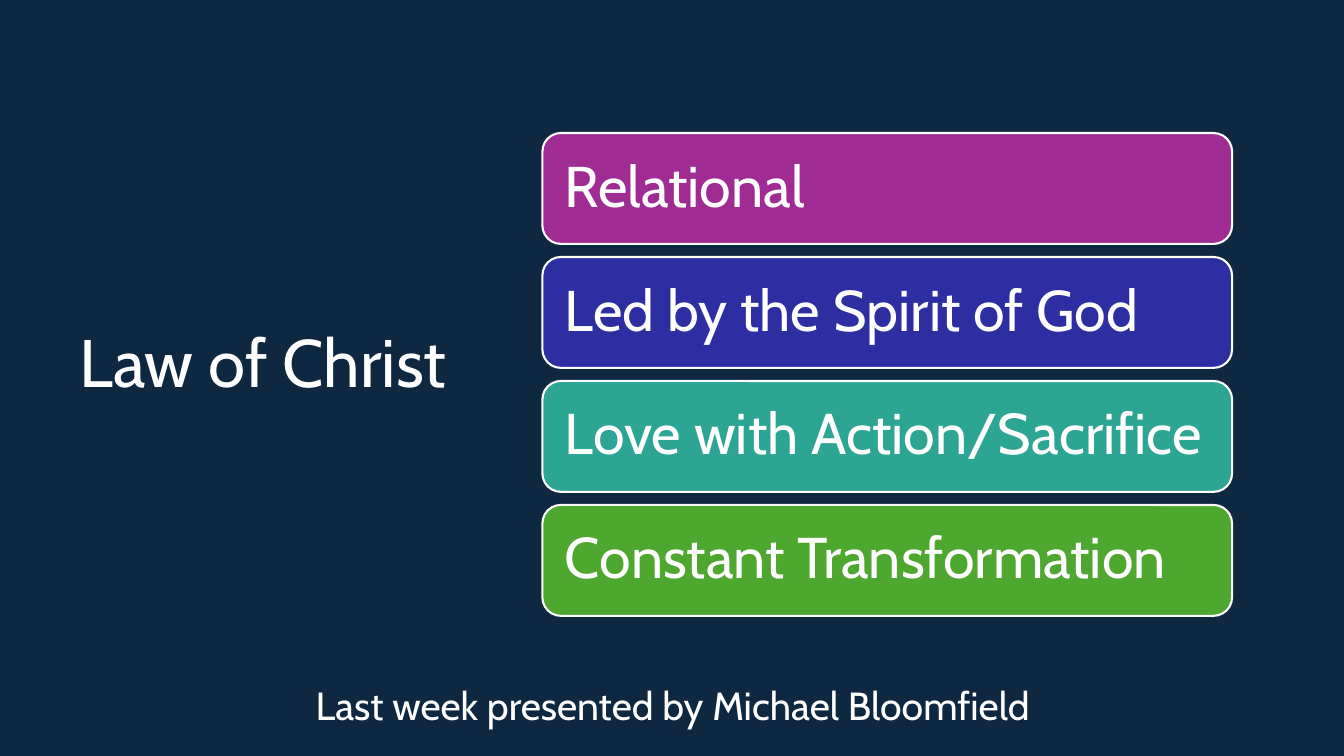
from dataclasses import dataclass

from pptx import Presentation
from pptx import util as u
from pptx.dml.color import RGBColor
from pptx.enum import shapes, text


@dataclass(frozen=True)
class Theme:
    font: str = "Cabin"
    background: str = "0E2841"
    light: str = "FFFFFF"
    cards: tuple = ("A02B93", "2C2EA2", "2DA594", "4EA72E")
    title_size: int = 48
    card_size: int = 41
    caption_size: int = 28
    outline: float = 1.5


class SlideBuilder:
    """Draw styled elements on the current slide."""

    def __init__(self, slide, theme):
        self.slide = slide
        self.theme = theme
        self.fill(slide.background, theme.background)

    def fill(self, target, color):
        target.fill.solid()
        target.fill.fore_color.rgb = RGBColor.from_string(color)

    def add_words(self, shape, words, size, frame_format, paragraph_format):
        frame = shape.text_frame
        paragraph = frame.paragraphs[0]
        run = paragraph.add_run()
        run.text = words
        font_format = {"name": self.theme.font, "size": u.Pt(size)}
        for target, values in (
            (frame, {"word_wrap": True, **frame_format}),
            (paragraph, paragraph_format),
            (run.font, font_format),
        ):
            for name, value in values.items():
                setattr(target, name, value)
        run.font.color.rgb = RGBColor.from_string(self.theme.light)

    def text_box(self, box, words, size, frame_format, paragraph_format):
        shape = self.slide.shapes.add_textbox(*map(u.Inches, box))
        self.add_words(shape, words, size, frame_format, paragraph_format)

    def card(self, box, words, color):
        shape = self.slide.shapes.add_shape(
            shapes.MSO_SHAPE.ROUNDED_RECTANGLE, *map(u.Inches, box)
        )
        shape.shadow.inherit = False
        self.fill(shape, color)
        self.fill(shape.line, self.theme.light)
        shape.line.width = u.Pt(self.theme.outline)
        sides = ("left", "top", "right", "bottom")
        frame_format = {f"margin_{side}": u.Inches(0.17) for side in sides}
        frame_format["vertical_anchor"] = text.MSO_ANCHOR.MIDDLE
        paragraph_format = {"alignment": text.PP_ALIGN.LEFT, "line_spacing": 0.9}
        self.add_words(
            shape, words, self.theme.card_size, frame_format, paragraph_format
        )


def main():
    theme = Theme()
    presentation = Presentation()
    presentation.slide_width = u.Inches(13.33)
    presentation.slide_height = u.Inches(7.5)
    slide = presentation.slides.add_slide(presentation.slide_layouts[6])
    builder = SlideBuilder(slide, theme)

    builder.text_box(
        (0.69, 0.54, 4.59, 6.17), "Law of Christ", theme.title_size,
        {"vertical_anchor": text.MSO_ANCHOR.MIDDLE}, {"line_spacing": 0.9},
    )

    principles = (
        "Relational",
        "Led by the Spirit of God",
        "Love with Action/Sacrifice",
        "Constant Transformation",
    )
    first_top, pitch = 1.32, 1.23
    for row, (principle, color) in enumerate(zip(principles, theme.cards)):
        builder.card((5.38, first_top + row * pitch, 6.84, 1.1), principle, color)

    builder.text_box(
        (2.35, 6.71, 8.64, 0.57), "Last week presented by Michael Bloomfield",
        theme.caption_size, {"auto_size": text.MSO_AUTO_SIZE.SHAPE_TO_FIT_TEXT},
        {"alignment": text.PP_ALIGN.CENTER},
    )
    presentation.save("out.pptx")


if __name__ == "__main__":
    main()
